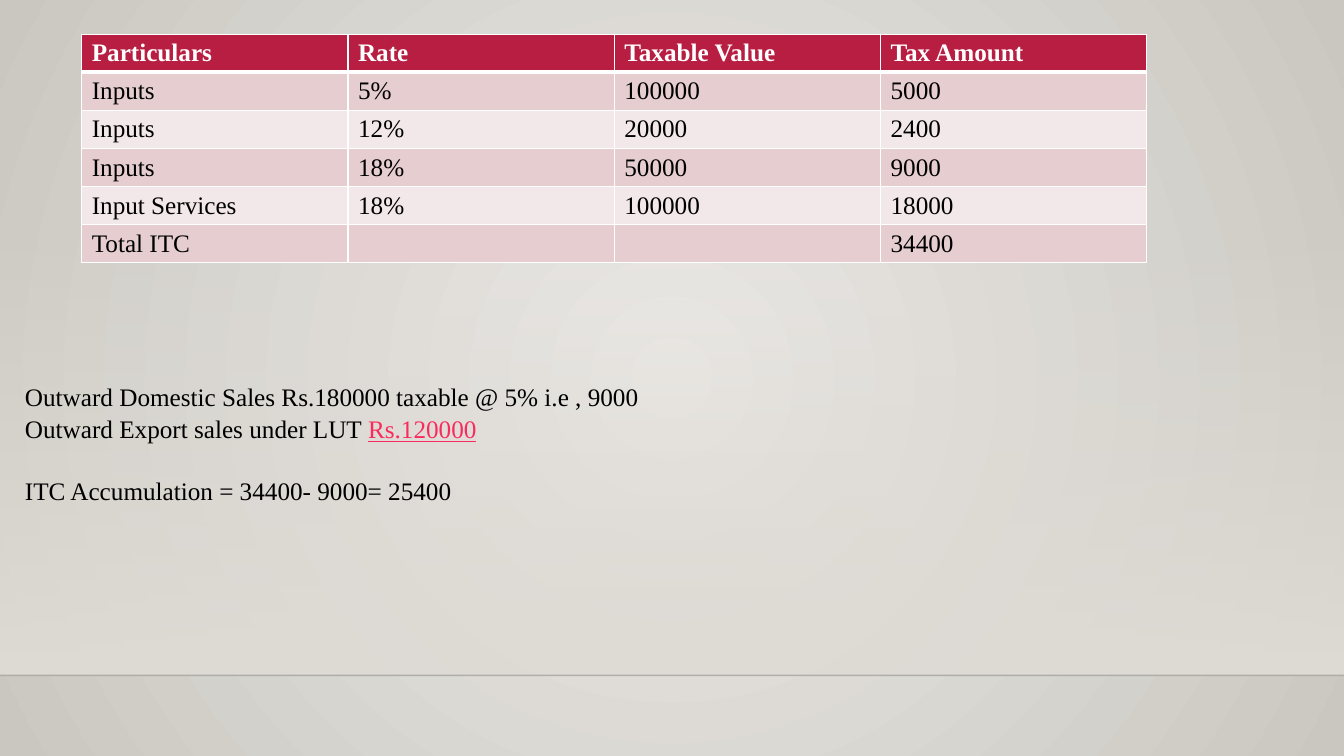
from lxml import etree
from pptx import Presentation
from pptx.dml.color import RGBColor
from pptx.enum.shapes import MSO_CONNECTOR, MSO_SHAPE
from pptx.enum.text import MSO_ANCHOR
from pptx.oxml import parse_xml
from pptx.oxml.ns import nsdecls, qn
from pptx.util import Cm, Pt

STRAIGHT = MSO_CONNECTOR.STRAIGHT
RECTANGLE = MSO_SHAPE.RECTANGLE
MIDDLE = MSO_ANCHOR.MIDDLE

COLORS = {
    "centre": "ECEAE7",
    "edge": "CAC7C1",
    "band": "DFDBD5",
    "rule": "000001",
    "header": "B71E42",
    "odd_row": "E6CDCF",
    "even_row": "F3E8E9",
    "white": "FFFFFF",
    "text": "000000",
    "accent": "FA2B5C",
}
FONT = "Times New Roman"
FONT_SIZE = Pt(18)
LINE_SPACING = 1.05
SLIDE_WIDTH = Cm(33.87)
FLOOR = Cm(17.02)

CREDIT_ROWS = [
    ["Particulars", "Rate", "Taxable Value", "Tax Amount"],
    ["Inputs", "5%", "100000", "5000"],
    ["Inputs", "12%", "20000", "2400"],
    ["Inputs", "18%", "50000", "9000"],
    ["Input Services", "18%", "100000", "18000"],
    ["Total ITC", "", "", "34400"],
]
SALES_LINES = [
    [("Outward Domestic Sales Rs.180000 taxable @ 5% i.e , 9000", "text")],
    [("Outward Export sales under LUT ", "text"), ("Rs.120000", "accent")],
    [("ITC Accumulation = 34400- 9000= 25400", "text")],
]


def rgb(name):
    return RGBColor.from_string(COLORS[name])


def style_font(font, color, bold=False):
    font.name = FONT
    font.size = FONT_SIZE
    font.bold = bold
    font.color.rgb = rgb(color)


def gradient_xml(start, end, direction, start_alpha=100):
    return (
        f'<a:gradFill {nsdecls("a")} rotWithShape="1"><a:gsLst>'
        f'<a:gs pos="0"><a:srgbClr val="{COLORS[start]}">'
        f'<a:alpha val="{start_alpha * 1000}"/></a:srgbClr></a:gs>'
        f'<a:gs pos="100000"><a:srgbClr val="{COLORS[end]}"/></a:gs>'
        f'</a:gsLst>{direction}</a:gradFill>'
    )


def paint_background(slide):
    radial = (
        '<a:path path="circle">'
        '<a:fillToRect l="50000" t="50000" r="50000" b="50000"/></a:path>'
    )
    background = parse_xml(
        f'<p:bg {nsdecls("p", "a")}><p:bgPr>'
        f'{gradient_xml("centre", "edge", radial)}'
        '<a:effectLst/></p:bgPr></p:bg>'
    )
    slide.element.find(qn("p:cSld")).insert(0, background)


def add_fading_band(slide):
    top = Cm(5.61)
    band = slide.shapes.add_shape(RECTANGLE, 0, top, SLIDE_WIDTH, FLOOR - top)
    band.shadow.inherit = False
    band.line.fill.background()
    downward = '<a:lin ang="5400000" scaled="0"/>'
    fill = parse_xml(gradient_xml("band", "band", downward, start_alpha=0))
    band.element.spPr.find(qn("a:prstGeom")).addnext(fill)


def add_floor_line(slide):
    line = slide.shapes.add_connector(STRAIGHT, 0, FLOOR, SLIDE_WIDTH, FLOOR)
    line.line.width = Pt(1)
    line.line.color.rgb = rgb("rule")
    properties = line.element.spPr
    color = properties.find(".//" + qn("a:srgbClr"))
    etree.SubElement(color, qn("a:alpha")).set("val", "20000")
    etree.SubElement(properties, qn("a:effectLst"))


def add_borders(cell, row_index):
    """White edges, with a thicker one between the header and the body."""
    widths = {
        "L": 1,
        "R": 1,
        "T": 3 if row_index == 1 else 1,
        "B": 3 if row_index == 0 else 1,
    }
    properties = cell._tc.get_or_add_tcPr()
    for side, width in widths.items():
        properties.append(parse_xml(
            f'<a:ln{side} {nsdecls("a")} w="{Pt(width)}"><a:solidFill>'
            f'<a:srgbClr val="{COLORS["white"]}"/></a:solidFill></a:ln{side}>'
        ))


def fill_cell(cell, value, row_index):
    is_header = row_index == 0
    add_borders(cell, row_index)
    cell.fill.solid()
    body_fill = "odd_row" if row_index % 2 else "even_row"
    cell.fill.fore_color.rgb = rgb("header" if is_header else body_fill)
    cell.margin_top = cell.margin_bottom = Cm(0.05)
    cell.vertical_anchor = MIDDLE
    cell.text_frame.text = value
    paragraph = cell.text_frame.paragraphs[0]
    style_font(paragraph.font, "white" if is_header else "text", is_header)
    for span in paragraph.runs:
        style_font(span.font, "white" if is_header else "text", is_header)


def add_credit_table(slide):
    row_height, column_width = Cm(0.96), Cm(6.71)
    row_count, column_count = len(CREDIT_ROWS), len(CREDIT_ROWS[0])
    table = slide.shapes.add_table(
        row_count, column_count, Cm(2.06), Cm(0.86),
        column_width * column_count, row_height * row_count,
    ).table
    for row_index, values in enumerate(CREDIT_ROWS):
        for column_index, value in enumerate(values):
            fill_cell(table.cell(row_index, column_index), value, row_index)


def add_sales_notes(slide):
    box = slide.shapes.add_textbox(Cm(0.38), Cm(9.45), Cm(32.36), Cm(7.19))
    frame = box.text_frame
    frame.word_wrap = True
    for index, parts in enumerate(SALES_LINES):
        para = frame.add_paragraph() if index else frame.paragraphs[0]
        para.line_spacing = LINE_SPACING
        for text, color in parts:
            span = para.add_run()
            span.text = text
            style_font(span.font, color)
            span.font.underline = color == "accent"
    frame.paragraphs[-1].space_before = Pt(21.7)


def main():
    deck = Presentation()
    deck.slide_width, deck.slide_height = SLIDE_WIDTH, Cm(19.05)
    slide = deck.slides.add_slide(deck.slide_layouts[6])
    paint_background(slide)
    add_fading_band(slide)
    add_floor_line(slide)
    add_credit_table(slide)
    add_sales_notes(slide)
    deck.save("out.pptx")


if __name__ == "__main__":
    main()
